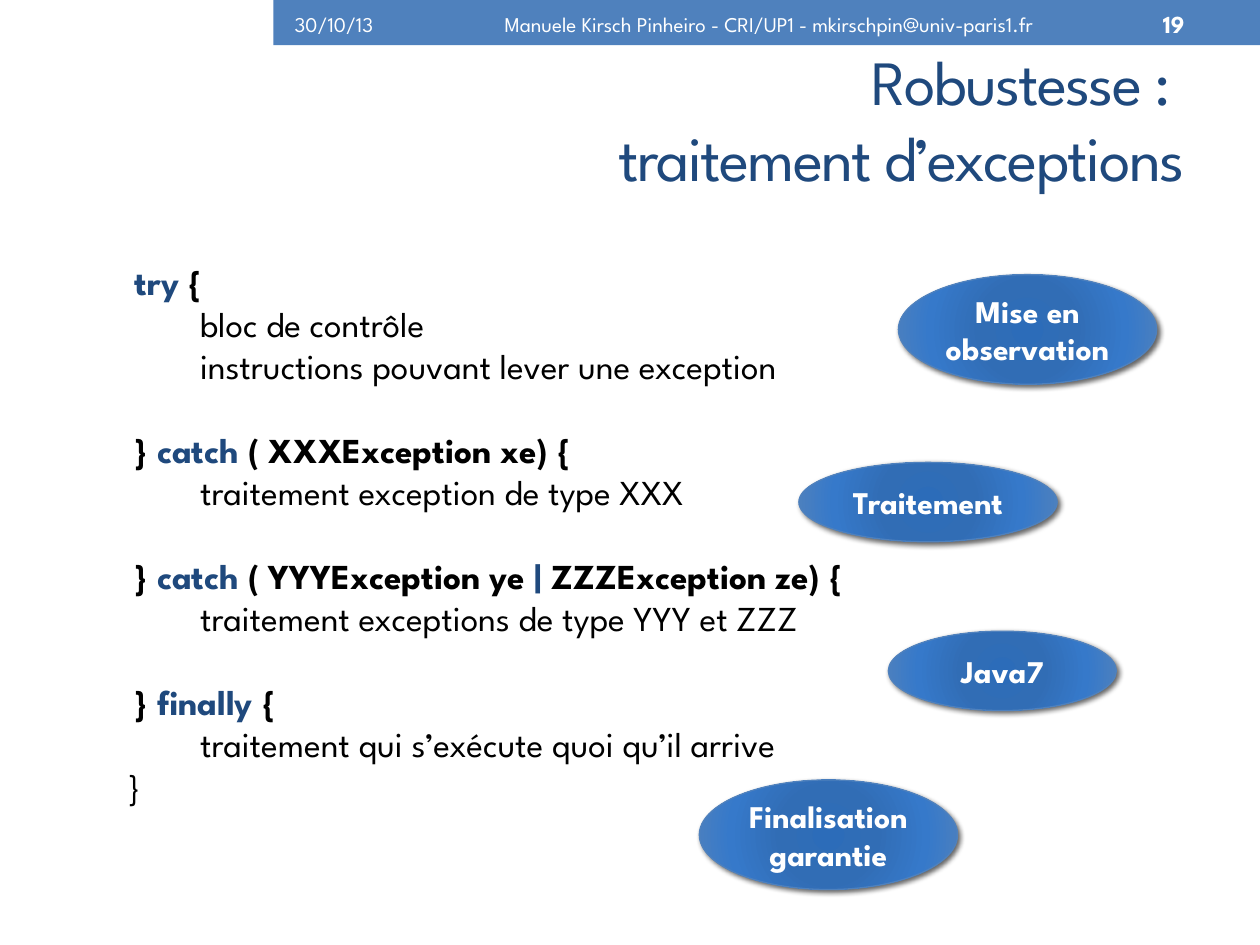
"""Build the slide on exception handling: header bar, title, code outline and four callouts."""
from lxml import etree
from pptx import Presentation
from pptx.dml.color import RGBColor
from pptx.enum.shapes import MSO_SHAPE
from pptx.enum.text import MSO_ANCHOR, MSO_AUTO_SIZE, PP_ALIGN
from pptx.oxml import parse_xml
from pptx.oxml.ns import nsdecls, qn
from pptx.util import Inches, Pt

FONT = "League Spartan"
COLORS = {"bar": "4F81BD", "navy": "1F497D", "black": "000000", "white": "FFFFFF"}
GRADIENT = [(0, "2C6CB9"), (34, "316DB5"), (70, "3679CA"), (100, "4F81BD")]


def style(font, size, color, bold=False):
    font.name, font.size, font.bold = FONT, Pt(size), bold
    font.color.rgb = RGBColor.from_string(COLORS[color])


def add_glow(callout):
    stops = "".join(
        f'<a:gs pos="{pos * 1000}"><a:srgbClr val="{color}"/></a:gs>' for pos, color in GRADIENT
    )
    gradient = parse_xml(
        f'<a:gradFill {nsdecls("a")} rotWithShape="1"><a:gsLst>{stops}</a:gsLst><a:path path="circle">'
        '<a:fillToRect l="100000" t="100000" r="100000" b="100000"/></a:path></a:gradFill>'
    )
    properties = callout.element.spPr
    properties.find(qn("a:prstGeom")).addnext(gradient)
    shadow = etree.SubElement(
        properties.find(qn("a:effectLst")), qn("a:outerShdw"),
        blurRad=str(Pt(3)), dist=str(Pt(2)), dir="2700000", algn="tl", rotWithShape="0",
    )
    color = etree.SubElement(shadow, qn("a:srgbClr"), val=COLORS["black"])
    etree.SubElement(color, qn("a:alpha"), val="60000")


prs = Presentation()
prs.slide_width, prs.slide_height = Inches(10), Inches(7.5)
slide = prs.slides.add_slide(prs.slide_layouts[5])

bar = slide.shapes.add_shape(MSO_SHAPE.RECTANGLE, Inches(2.17), 0, Inches(7.83), Inches(0.36))
bar.shadow.inherit = False
bar.fill.solid()
bar.fill.fore_color.rgb = RGBColor.from_string(COLORS["bar"])
bar.line.fill.background()

title = slide.shapes.title
title.left, title.top, title.width, title.height = Inches(0.51), Inches(0.44), Inches(8.99), Inches(1)
title.text_frame.text = "Robustesse : \vtraitement d’exceptions"
title.text_frame.auto_size = MSO_AUTO_SIZE.NONE
title.text_frame.vertical_anchor = MSO_ANCHOR.MIDDLE
heading = title.text_frame.paragraphs[0]
heading.alignment = PP_ALIGN.RIGHT
style(heading.font, 36, "navy")
for run in heading.runs:
    run.font.size = Pt(36)
    run.font._element.set("spc", "-100")

header = [
    ("30/10/13", 2.24, 1.18, PP_ALIGN.LEFT, 12, False),
    ("Manuele Kirsch Pinheiro - CRI/UP1 - mkirschpin@univ-paris1.fr",
     3.35, 5.51, PP_ALIGN.CENTER, 12, False),
    ("19", 8.94, 0.56, PP_ALIGN.RIGHT, 14, True),
]
for text, left, width, alignment, size, bold in header:
    frame = slide.shapes.add_textbox(Inches(left), Inches(0.02), Inches(width), Inches(0.34)).text_frame
    frame.word_wrap = True
    frame.vertical_anchor = MSO_ANCHOR.MIDDLE
    frame.text = text
    frame.paragraphs[0].alignment = alignment
    style(frame.paragraphs[0].font, size, "white", bold)

code_lines = [
    (0.06, 0, True, [("try ", "navy"), ("{", "black")]),
    (0.58, 0, False, [("bloc de contrôle", "black")]),
    (0.58, 0, False, [("instructions pouvant lever une exception", "black")]),
    (0.06, 24, True, [("} ", "black"), ("catch", "navy"), (" ( XXXException xe) {", "black")]),
    (0.58, 0, False, [("traitement exception de type XXX", "black")]),
    (0.06, 24, True, [("} ", "black"), ("catch", "navy"), (" ( YYYException ye ", "black"),
                      ("| ", "navy"), ("ZZZException ze) {", "black")]),
    (0.58, 0, False, [("traitement exceptions de type YYY et ZZZ", "black")]),
    (0.06, 24, True, [("} ", "black"), ("finally", "navy"), (" {", "black")]),
    (0.58, 0, False, [("traitement qui s’exécute quoi qu’il arrive", "black")]),
    (0, 0, False, [("}", "black")]),
]
code = slide.shapes.add_textbox(Inches(0.91), Inches(2.02), Inches(6.77), Inches(4.48)).text_frame
code.word_wrap = True
for number, (indent, gap, bold, parts) in enumerate(code_lines):
    line = code.add_paragraph() if number else code.paragraphs[0]
    line._p.get_or_add_pPr().set("marL", str(Inches(indent)))
    if gap:
        line.space_before = Pt(gap)
    for text, color in parts:
        run = line.add_run()
        run.text = text
        style(run.font, 20, color, bold)

callouts = [
    ("Mise en observation", 7.13, 2.18, 2.05, 0.87),
    ("Java7", 7.05, 5.01, 1.81, 0.63),
    ("Finalisation garantie", 5.55, 6.19, 2.05, 0.87),
    ("Traitement", 6.34, 3.67, 2.05, 0.63),
]
for text, left, top, width, height in callouts:
    callout = slide.shapes.add_shape(
        MSO_SHAPE.OVAL, Inches(left), Inches(top), Inches(width), Inches(height)
    )
    callout.shadow.inherit = False
    callout.line.color.rgb = RGBColor.from_string(COLORS["bar"])
    callout.line.width = Pt(0.75)
    add_glow(callout)
    frame = callout.text_frame
    frame.margin_left = frame.margin_right = frame.margin_top = frame.margin_bottom = 0
    frame.word_wrap = True
    frame.vertical_anchor = MSO_ANCHOR.MIDDLE
    frame.text = text
    frame.paragraphs[0].alignment = PP_ALIGN.CENTER
    style(frame.paragraphs[0].font, 18, "white", True)

prs.save("out.pptx")
